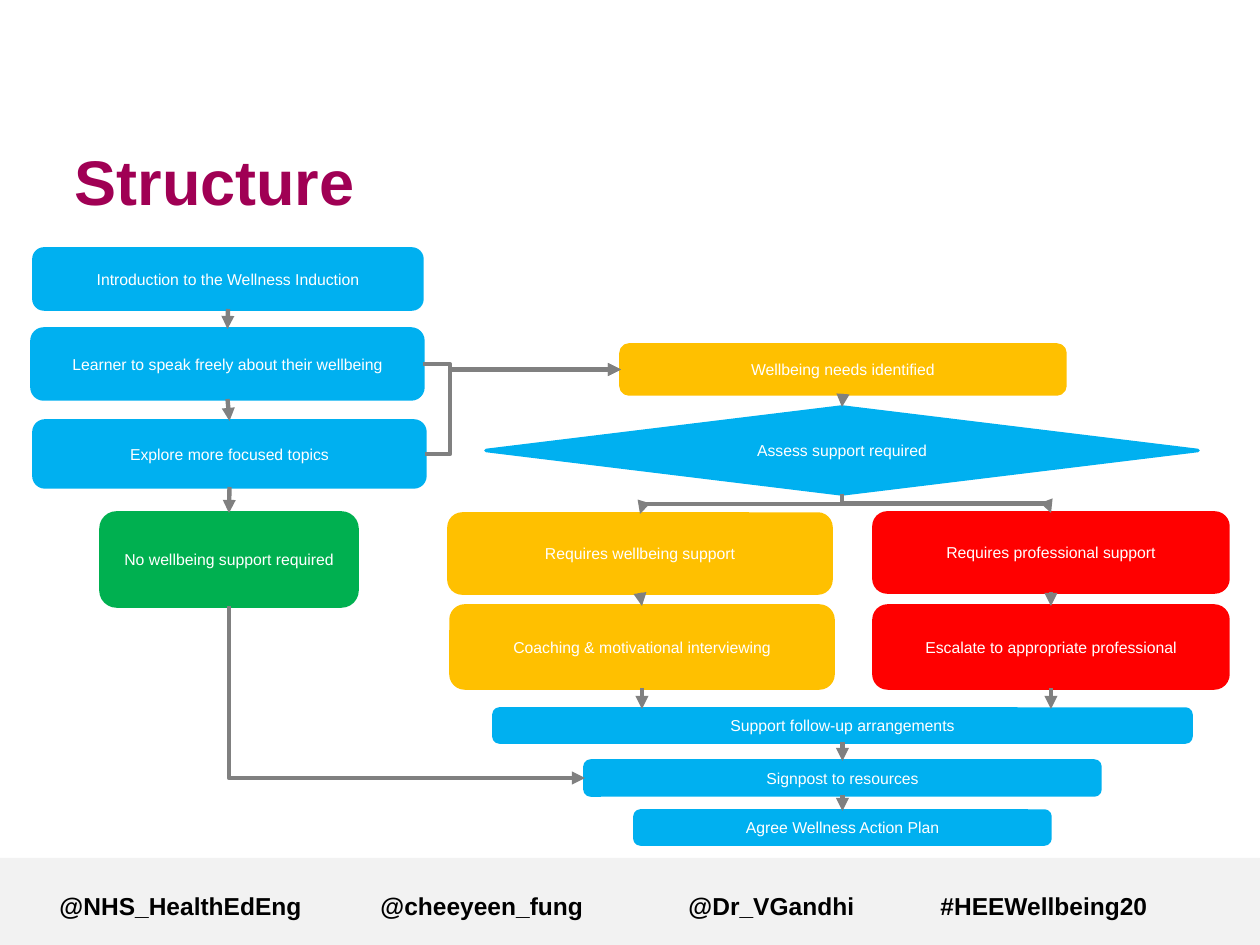
from lxml import etree
from pptx import Presentation
from pptx import util as u
from pptx.dml.color import RGBColor
from pptx.enum import shapes, text
from pptx.oxml import ns

PX = u.Inches(1) / 126
TOP, LEFT, BOTTOM, RIGHT = range(4)
BLUE, AMBER, RED, GREEN = "00B0F0", "FFC000", "FF0000", "00B050"
GREY, WHITE, BLACK, PLUM, BAND = "808080", "FFFFFF", "000000", "A00054", "F2F2F2"

TITLE = "Structure"
HANDLES = ["@NHS_HealthEdEng", "@cheeyeen_fung", "@Dr_VGandhi", "#HEEWellbeing20"]
HANDLE_STOPS = [321, 629, 881]

# name: (text, colour, left, top, width, height)
STEPS = {
    "intro": ("Introduction to the Wellness Induction", BLUE, 34, 249, 388, 60),
    "learner": ("Learner to speak freely about their wellbeing", BLUE, 32, 329, 391, 70),
    "explore": ("Explore more focused topics", BLUE, 34, 421, 391, 66),
    "none": ("No wellbeing support required", GREEN, 101, 513, 256, 93),
    "needs": ("Wellbeing needs identified", AMBER, 621, 345, 444, 49),
    "assess": ("Assess support required", BLUE, 486, 407, 712, 87),
    "wellbeing": ("Requires wellbeing support", AMBER, 449, 514, 382, 79),
    "professional": ("Requires professional support", RED, 874, 513, 354, 79),
    "coaching": ("Coaching & motivational interviewing", AMBER, 451, 606, 382, 82),
    "escalate": ("Escalate to appropriate professional", RED, 874, 606, 354, 82),
    "follow_up": ("Support follow-up arrangements", BLUE, 494, 709, 697, 33),
    "signpost": ("Signpost to resources", BLUE, 585, 761, 515, 34),
    "plan": ("Agree Wellness Action Plan", BLUE, 635, 811, 415, 33),
}
DIAMONDS = {"assess"}

DOWN_ARROWS = [
    ("intro", "learner"), ("learner", "explore"), ("explore", "none"),
    ("needs", "assess"), ("wellbeing", "coaching"), ("professional", "escalate"),
    ("follow_up", "signpost"), ("signpost", "plan"),
]
MERGING_ARROWS = [("coaching", "follow_up"), ("escalate", "follow_up")]
SIDE_ELBOWS = [("learner", "needs"), ("explore", "needs")]
SIDE_TRUNK = 450
SPLIT_ELBOWS = [("assess", "wellbeing"), ("assess", "professional")]


def px(value):
    return u.Emu(round(value * PX))


def color(value):
    return RGBColor.from_string(value)


def fill(shape, value):
    shape.shadow.inherit = False
    shape.fill.solid()
    shape.fill.fore_color.rgb = color(value)


def write(shape, words, size, ink, bold=False, align="LEFT", anchor="TOP"):
    frame = shape.text_frame
    settings = {"word_wrap": True, "auto_size": text.MSO_AUTO_SIZE.NONE,
                "vertical_anchor": getattr(text.MSO_ANCHOR, anchor)}
    for name, value in settings.items():
        setattr(frame, name, value)
    paragraph = frame.paragraphs[0]
    paragraph.text = words
    paragraph.alignment = getattr(text.PP_ALIGN, align)
    font = paragraph.runs[0].font
    for name, value in {"name": "Arial", "size": u.Pt(size), "bold": bold}.items():
        setattr(font, name, value)
    font.color.rgb = color(ink)
    return paragraph


def site(name, side):
    """Middle of one side of a step, in px."""
    left, top, width, height = STEPS[name][2:]
    return {TOP: (left + width / 2, top), BOTTOM: (left + width / 2, top + height),
            LEFT: (left, top + height / 2), RIGHT: (left + width, top + height / 2)}[side]


def arrow(slide, start, end, kind="STRAIGHT"):
    connector = slide.shapes.add_connector(
        getattr(shapes.MSO_CONNECTOR, kind), *map(px, (*start, *end)))
    connector.line.color.rgb = color(GREY)
    connector.line.width = u.Pt(2.5)
    line = connector.line._get_or_add_ln()
    etree.SubElement(line, ns.qn("a:tailEnd"), type="triangle")
    etree.SubElement(connector._element.spPr, ns.qn("a:effectLst"))
    return connector


def set_bend(connector, share):
    """Place the middle leg of an elbow at a share of its length."""
    guides = connector._element.spPr.find(ns.qn("a:prstGeom")).find(ns.qn("a:avLst"))
    etree.SubElement(guides, ns.qn("a:gd"), name="adj1", fmla=f"val {round(share * 100000)}")


def drop_elbow(slide, start, end, preset):
    """Elbow that leaves downwards: a sideways elbow turned a quarter."""
    connector = arrow(slide, start, end, "ELBOW")
    (x1, y1), (x2, y2) = start, end
    length, breadth = y2 - y1, abs(x2 - x1)
    connector.left = px((x1 + x2 - length) / 2)
    connector.top = px((y1 + y2 - breadth) / 2)
    connector.width, connector.height = px(length), px(breadth)
    properties = connector._element.spPr
    rightward = x2 > x1
    frame = properties.find(ns.qn("a:xfrm"))
    frame.set("rot", str((270 if rightward else 90) * 60000))
    frame.set("flipH", str(int(rightward)))
    properties.find(ns.qn("a:prstGeom")).set("prst", preset)


def add_steps(slide):
    steps = {}
    for name, (words, tone, *place) in STEPS.items():
        kind = "DIAMOND" if name in DIAMONDS else "ROUNDED_RECTANGLE"
        shape = slide.shapes.add_shape(getattr(shapes.MSO_SHAPE, kind), *map(px, place))
        fill(shape, tone)
        shape.line.color.rgb = color(tone)
        shape.line.width = u.Pt(2)
        write(shape, words, 9, WHITE, align="CENTER", anchor="MIDDLE")
        steps[name] = shape
    return steps


def add_arrows(slide, steps):
    for source, target in DOWN_ARROWS:
        connector = arrow(slide, site(source, BOTTOM), site(target, TOP))
        connector.begin_connect(steps[source], BOTTOM)
        connector.end_connect(steps[target], TOP)
    for source, target in MERGING_ARROWS:
        start = site(source, BOTTOM)
        connector = arrow(slide, start, (start[0], site(target, TOP)[1]))
        connector.begin_connect(steps[source], BOTTOM)
    for source, target in SIDE_ELBOWS:
        start, end = site(source, RIGHT), site(target, LEFT)
        connector = arrow(slide, start, end, "ELBOW")
        set_bend(connector, (SIDE_TRUNK - start[0]) / (end[0] - start[0]))
    for source, target in SPLIT_ELBOWS:
        drop_elbow(slide, site(source, BOTTOM), site(target, TOP), "bentConnector3")
    drop_elbow(slide, site("none", BOTTOM), site("signpost", LEFT), "bentConnector2")


def add_footer(slide):
    band = slide.shapes.add_shape(shapes.MSO_SHAPE.RECTANGLE, *map(px, (0, 858, 1260, 87)))
    fill(band, BAND)
    band.line.fill.background()
    box = slide.shapes.add_textbox(*map(px, (47, 885, 1192, 60)))
    paragraph = write(box, "\t".join(HANDLES), 14, BLACK, bold=True)
    stops = etree.SubElement(paragraph._p.get_or_add_pPr(), ns.qn("a:tabLst"))
    for stop in HANDLE_STOPS:
        etree.SubElement(stops, ns.qn("a:tab"), pos=str(px(stop)), algn="l")


def main():
    presentation = Presentation()
    presentation.slide_width, presentation.slide_height = px(1260), px(945)
    slide = presentation.slides.add_slide(presentation.slide_layouts[5])
    title = slide.shapes.title
    title.left, title.top, title.width, title.height = map(px, (62, 134, 1071, 93))
    write(title, TITLE, 36, PLUM, bold=True, anchor="MIDDLE")
    add_footer(slide)
    add_arrows(slide, add_steps(slide))
    presentation.save("out.pptx")


if __name__ == "__main__":
    main()
